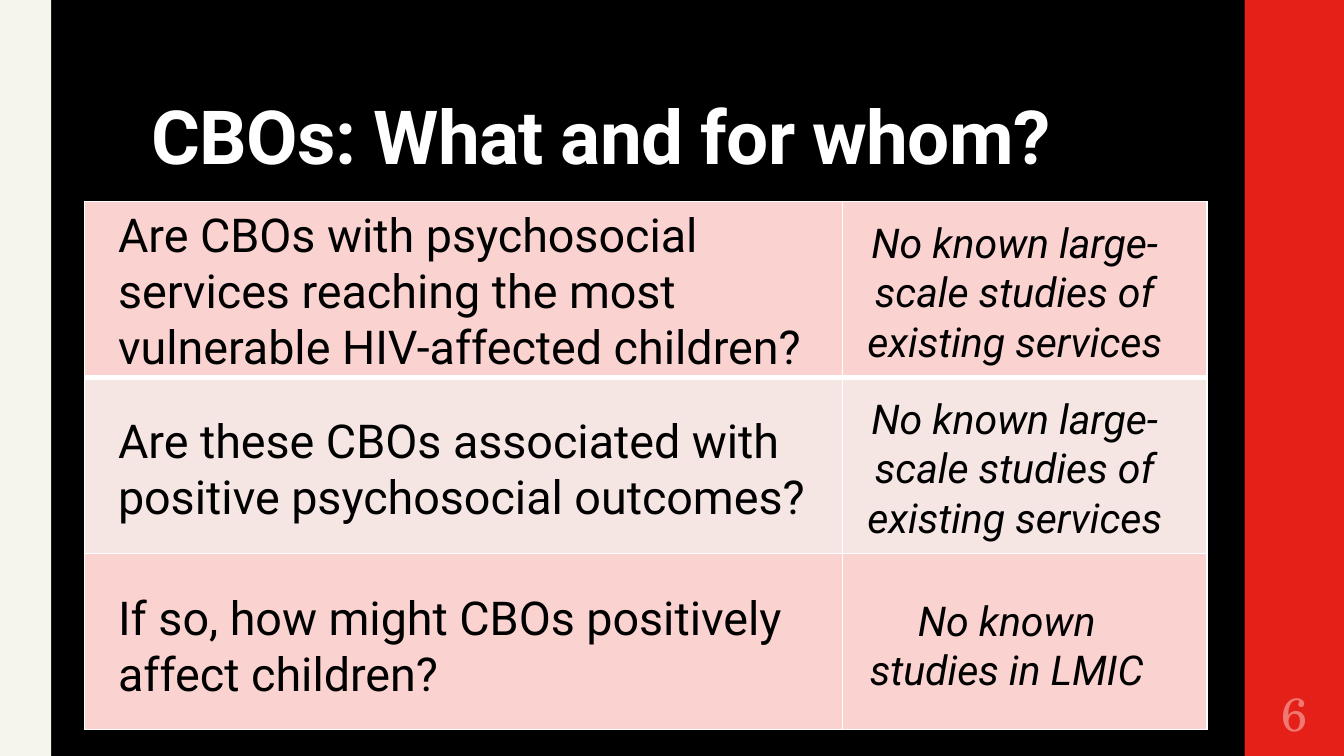
from dataclasses import dataclass

from lxml import etree
from pptx import Presentation
from pptx.dml.color import RGBColor
from pptx.enum.shapes import MSO_SHAPE
from pptx.enum.text import MSO_ANCHOR, PP_ALIGN
from pptx.oxml.ns import qn
from pptx.slide import Slide
from pptx.table import _Cell
from pptx.util import Inches, Pt

RECTANGLE = MSO_SHAPE.RECTANGLE
TOP, MIDDLE, BOTTOM = MSO_ANCHOR.TOP, MSO_ANCHOR.MIDDLE, MSO_ANCHOR.BOTTOM
LEFT, CENTER = PP_ALIGN.LEFT, PP_ALIGN.CENTER

SLIDE_WIDTH = 10
SLIDE_HEIGHT = SLIDE_WIDTH * 9 / 16


@dataclass(frozen=True)
class Theme:
    background: str = "000000"
    red_band: str = "E52018"
    cream_band: str = "F5F4ED"
    white: str = "FFFFFF"
    ink: str = "000000"
    page_number: str = "F07873"
    row_fills: tuple[str, str] = ("FAD2D0", "F5E5E3")
    font: str = "Roboto"
    number_font: str = "TeX Gyre Schola"
    title_size: float = 40
    question_size: float = 25
    evidence_size: float = 22
    number_size: float = 25
    thin_border: float = 1
    thick_border: float = 3


THEME = Theme()


@dataclass(frozen=True)
class Box:
    left: float
    top: float
    width: float
    height: float

    def lengths(self) -> tuple[Inches, Inches, Inches, Inches]:
        return (Inches(self.left), Inches(self.top),
                Inches(self.width), Inches(self.height))


@dataclass(frozen=True)
class TextStyle:
    size: float
    color: str
    font: str = THEME.font
    bold: bool = False
    italic: bool = False
    align: PP_ALIGN = LEFT
    anchor: MSO_ANCHOR = MIDDLE
    insets: tuple[float, float, float, float] = (0.1, 0.05, 0.1, 0.05)
    line_spacing: float = 1.0
    tracking: float = 0


TITLE = TextStyle(THEME.title_size, THEME.white, bold=True, anchor=BOTTOM,
                  insets=(0.1, 0.03, 0.1, 0.05), line_spacing=0.9, tracking=-0.38)
QUESTION = TextStyle(THEME.question_size, THEME.ink)
EVIDENCE = TextStyle(THEME.evidence_size, THEME.ink, italic=True,
                     align=CENTER, anchor=TOP)
PAGE_NUMBER = TextStyle(THEME.number_size, THEME.page_number, THEME.number_font,
                        align=CENTER, insets=(0.05, 0.05, 0.05, 0.05))


@dataclass(frozen=True)
class StudyRow:
    question: str
    question_box: Box
    evidence: str
    evidence_box: Box


NO_LARGE_STUDIES = "No known large-scale studies of existing services"
STUDY_ROWS = (
    StudyRow("Are CBOs with psychosocial services reaching the most "
             "vulnerable HIV-affected children?", Box(0.78, 1.48, 5.31, 1.36),
             NO_LARGE_STUDIES, Box(6.3, 1.57, 2.5, 1.21)),
    StudyRow("Are these CBOs associated with positive psychosocial outcomes?",
             Box(0.78, 3.01, 5.31, 0.94),
             NO_LARGE_STUDIES, Box(6.3, 2.88, 2.5, 1.21)),
    StudyRow("If so, how might CBOs positively affect children?",
             Box(0.78, 4.33, 5.31, 0.94),
             "No known studies in LMIC", Box(6.24, 4.38, 2.5, 0.84)),
)
GRID_BOX = Box(0.63, 1.5, 8.36, 3.93)
COLUMN_WIDTHS = (5.64, 2.71)


def add_band(slide: Slide, box: Box, color: str) -> None:
    band = slide.shapes.add_shape(RECTANGLE, *box.lengths())
    band.shadow.inherit = False
    band.fill.solid()
    band.fill.fore_color.rgb = RGBColor.from_string(color)
    band.line.fill.background()


def add_text(slide: Slide, text: str, box: Box, style: TextStyle) -> None:
    frame = slide.shapes.add_textbox(*box.lengths()).text_frame
    frame.word_wrap = True
    frame.vertical_anchor = style.anchor
    (frame.margin_left, frame.margin_top,
     frame.margin_right, frame.margin_bottom) = map(Inches, style.insets)
    paragraph = frame.paragraphs[0]
    paragraph.alignment = style.align
    paragraph.line_spacing = style.line_spacing
    run = paragraph.add_run()
    run.text = text
    run.font.name = style.font
    run.font.size = Pt(style.size)
    run.font.bold = style.bold
    run.font.italic = style.italic
    run.font.color.rgb = RGBColor.from_string(style.color)
    if style.tracking:
        run.font._element.set("spc", str(round(style.tracking * 100)))


def set_borders(cell: _Cell, top: float, bottom: float) -> None:
    widths = {"lnL": THEME.thin_border, "lnR": THEME.thin_border,
              "lnT": top, "lnB": bottom}
    properties = cell._tc.get_or_add_tcPr()
    # Border lines must come before the cell fill
    for position, (side, width) in enumerate(widths.items()):
        line = etree.Element(qn(f"a:{side}"), w=str(Pt(width)))
        fill = etree.SubElement(line, qn("a:solidFill"))
        etree.SubElement(fill, qn("a:srgbClr"), val=THEME.white)
        properties.insert(position, line)


def add_grid(slide: Slide) -> None:
    row_count = len(STUDY_ROWS)
    grid = slide.shapes.add_table(row_count, len(COLUMN_WIDTHS),
                                  *GRID_BOX.lengths()).table
    for column, width in zip(grid.columns, COLUMN_WIDTHS):
        column.width = Inches(width)
    for index, row in enumerate(grid.rows):
        row.height = Inches(GRID_BOX.height / row_count)
        top = THEME.thick_border if index == 1 else THEME.thin_border
        bottom = THEME.thick_border if index == 0 else THEME.thin_border
        for cell in row.cells:
            cell.fill.solid()
            cell.fill.fore_color.rgb = RGBColor.from_string(THEME.row_fills[index % 2])
            set_borders(cell, top, bottom)


def main() -> None:
    presentation = Presentation()
    presentation.slide_width = Inches(SLIDE_WIDTH)
    presentation.slide_height = Inches(SLIDE_HEIGHT)
    slide = presentation.slides.add_slide(presentation.slide_layouts[6])

    # Background and side bands
    slide.background.fill.solid()
    slide.background.fill.fore_color.rgb = RGBColor.from_string(THEME.background)
    add_band(slide, Box(9.26, 0, 0.75, SLIDE_HEIGHT), THEME.red_band)
    add_band(slide, Box(0, 0, 0.38, SLIDE_HEIGHT), THEME.cream_band)

    # Title
    add_text(slide, "CBOs: What and for whom?", Box(1.03, 0.24, 7.95, 1.15), TITLE)

    # Questions and the evidence for each
    add_grid(slide)
    for row in STUDY_ROWS:
        add_text(slide, row.question, row.question_box, QUESTION)
        add_text(slide, row.evidence, row.evidence_box, EVIDENCE)

    # Page number
    add_text(slide, "6", Box(9.26, 5.06, 0.75, 0.49), PAGE_NUMBER)

    presentation.save("out.pptx")


if __name__ == "__main__":
    main()
